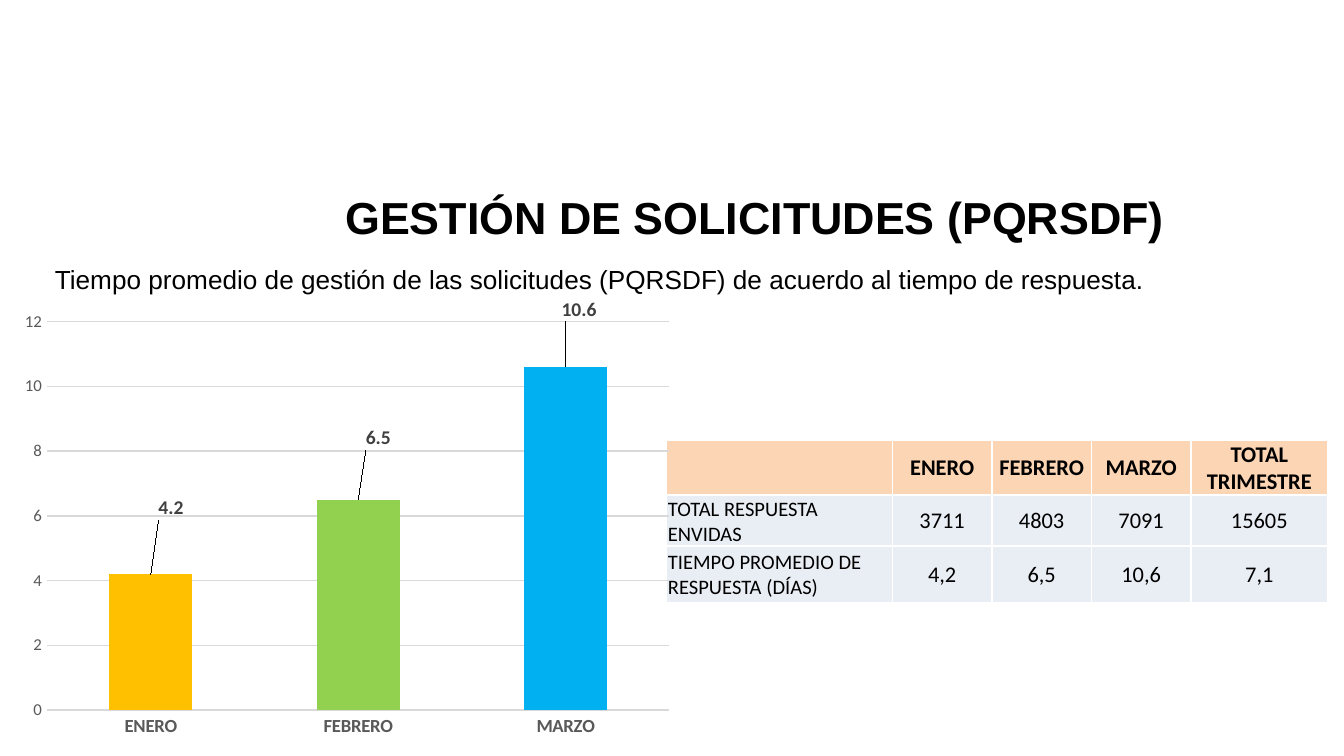
from lxml.etree import SubElement as Sub
from pptx import Presentation
from pptx.chart.data import CategoryChartData as Data
from pptx.dml.color import RGBColor as RGB
from pptx.enum.chart import XL_CHART_TYPE as Kind, XL_TICK_MARK as Tick
from pptx.enum.text import MSO_ANCHOR as Anchor, MSO_AUTO_SIZE as Fit, PP_ALIGN as Align
from pptx.oxml import parse_xml
from pptx.oxml.ns import nsdecls, qn
from pptx.util import Pt

# Content
TITLE = "GESTIÓN DE SOLICITUDES (PQRSDF)"
LEAD = "Tiempo promedio de gestión de las solicitudes (PQRSDF) de acuerdo al tiempo de respuesta."
ROWS = [
    ("", "ENERO", "FEBRERO", "MARZO", "TOTAL TRIMESTRE"),
    ("TOTAL RESPUESTA ENVIDAS", "3711", "4803", "7091", "15605"),
    ("TIEMPO PROMEDIO DE RESPUESTA (DÍAS)", "4,2", "6,5", "10,6", "7,1"),
]
# month, days, bar colour, label shift as a share of the chart
BARS = [
    ("ENERO", 4.2, "gold", (0.03, -0.11)),
    ("FEBRERO", 6.5, "green", (0.03, -0.1)),
    ("MARZO", 10.6, "blue", (0.02, -0.09)),
]
COLS = [121, 53.3, 53.3, 53.3, 73.4]
HIGH = [29.5, 27.4, 30.2]
HEX = {
    "black": "000000", "white": "FFFFFF", "peach": "FCD5B5", "pale": "E9EDF4",
    "gold": "FFC000", "green": "92D050", "blue": "00B0F0",
    "grid": "D9D9D9", "axis": "595959", "label": "404040",
}


def tint(name):
    return RGB.from_string(HEX[name])


def style(font, size, color="black", bold=False, face="Calibri"):
    font.name, font.size, font.bold = face, Pt(size), bold
    font.color.rgb = tint(color)


def place(shape, x, y, w, h):
    shape.left, shape.top, shape.width, shape.height = Pt(x), Pt(y), Pt(w), Pt(h)


def layout(**parts):
    tags = "".join(f'<c:{key} val="{val}"/>' for key, val in parts.items())
    return parse_xml(f"<c:layout {nsdecls('c')}><c:manualLayout>{tags}"
                     "</c:manualLayout></c:layout>")


def edge(cell):
    props = cell._tc.get_or_add_tcPr()
    for side in ("lnL", "lnR", "lnT", "lnB"):
        line = Sub(props, qn("a:" + side), w=str(Pt(1)))
        fill = Sub(line, qn("a:solidFill"))
        Sub(fill, qn("a:srgbClr"), val=HEX["white"])


deck = Presentation()
deck.slide_width, deck.slide_height = Pt(720), Pt(405)
slide = deck.slides.add_slide(deck.slide_layouts[5])

# Title
title = slide.shapes.title
place(title, 177.8, 82, 530, 67.7)
frame = title.text_frame
frame.text = TITLE
frame.auto_size, frame.vertical_anchor = Fit.NONE, Anchor.MIDDLE
frame.paragraphs[0].alignment = Align.LEFT
style(frame.paragraphs[0].runs[0].font, 24, bold=True, face="Arial")

# Lead line
lead = slide.shapes.add_textbox(Pt(22.3), Pt(137.5), Pt(600.5), Pt(24.5))
frame = lead.text_frame
frame.text = LEAD
frame.word_wrap, frame.auto_size = False, Fit.SHAPE_TO_FIT_TEXT
style(frame.paragraphs[0].runs[0].font, 14, face="Arial")

# Table
table = slide.shapes.add_table(len(ROWS), len(COLS), Pt(357.1), Pt(235.7),
                               Pt(sum(COLS)), Pt(sum(HIGH))).table
for col, wide in zip(table.columns, COLS):
    col.width = Pt(wide)
for r, (row, high) in enumerate(zip(ROWS, HIGH)):
    table.rows[r].height = Pt(high)
    for c, text in enumerate(row):
        cell = table.cell(r, c)
        edge(cell)
        cell.fill.solid()
        cell.fill.fore_color.rgb = tint("pale" if r else "peach")
        cell.margin_left = cell.margin_right = cell.margin_top = Pt(0.7)
        cell.margin_bottom = 0
        cell.vertical_anchor = Anchor.MIDDLE
        cell.text = text
        para = cell.text_frame.paragraphs[0]
        para.alignment = Align.CENTER if c else Align.LEFT
        for run in para.runs:
            style(run.font, 12 if c else 11, bold=r == 0)

# Chart
data = Data()
data.categories = [bar[0] for bar in BARS]
data.add_series("Series 1", [bar[1] for bar in BARS])
chart = slide.shapes.add_chart(Kind.COLUMN_CLUSTERED, Pt(5.8), Pt(159.8),
                               Pt(360), Pt(239), data).chart
chart.has_legend = chart.has_title = False
style(chart.font, 10)
area = chart._chartSpace.chart.plotArea
for old in area.findall(qn("c:layout")):
    area.remove(old)
area.insert(0, layout(layoutTarget="inner", xMode="edge", yMode="edge",
                      x=0.054, y=0.044, w=0.926, h=0.879))

# Axes
months, days = chart.category_axis, chart.value_axis
for axis, size, bold in ((months, 10, True), (days, 9, False)):
    axis.major_tick_mark = axis.minor_tick_mark = Tick.NONE
    axis.format.line.fill.background()
    style(axis.tick_labels.font, size, "axis", bold)
days.minimum_scale, days.maximum_scale, days.major_unit = 0, 12, 2
days.has_major_gridlines = True
grid = days.major_gridlines.format.line
grid.width, grid.color.rgb = Pt(0.75), tint("grid")

# Bars and their shifted labels
plot = chart.plots[0]
plot.gap_width, plot.vary_by_categories = 150, False
series = plot.series[0]
series.data_labels.show_value = True
style(series.data_labels.font, 10.5, "label", True)
for i, (_, _, color, (dx, dy)) in enumerate(BARS):
    point = series.points[i]
    point.format.fill.solid()
    point.format.fill.fore_color.rgb = tint(color)
    style(point.data_label.font, 10.5, "label", True)
for mark, bar in zip(series.data_labels._element.findall(qn("c:dLbl")), BARS):
    mark.insert(1, layout(x=bar[3][0], y=bar[3][1]))

deck.save("out.pptx")
